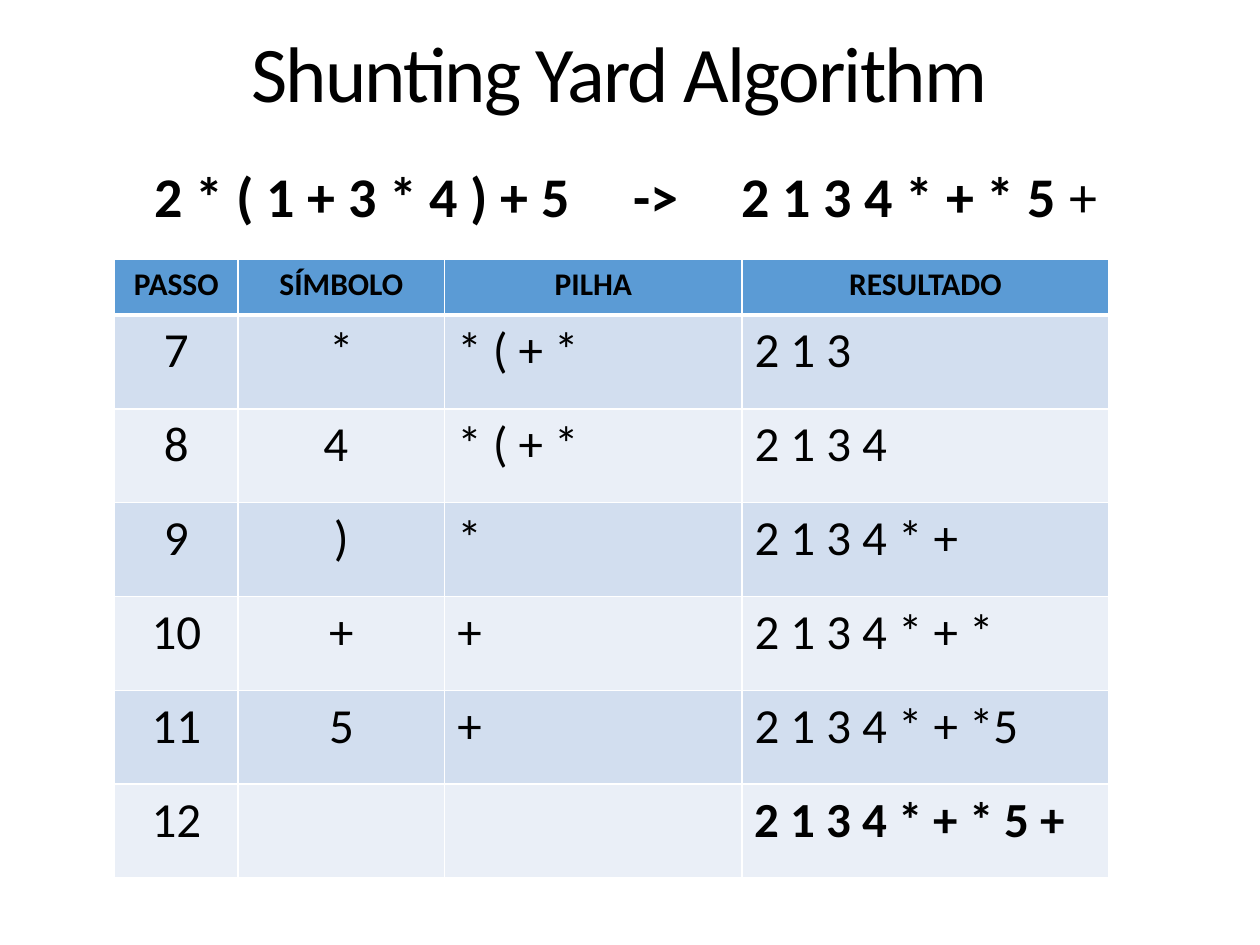
from pptx import Presentation
from pptx.dml.color import RGBColor
from pptx.enum.text import MSO_ANCHOR, MSO_AUTO_SIZE, PP_ALIGN
from pptx.oxml.xmlchemy import OxmlElement
from pptx.util import Inches, Pt

COLORS = {"text": "000000", "header": "5B9BD5", "odd": "D2DEEF",
          "even": "EAEFF7", "border": "FFFFFF"}
FONT = "Calibri"
HEADINGS = ["PASSO", "SÍMBOLO", "PILHA", "RESULTADO"]
STEPS = [
    ["7", "*", "* ( + *", "2 1 3"],
    ["8", "4 ", "* ( + *", "2 1 3 4"],
    ["9", ")", "* ", "2 1 3 4 * + "],
    ["10", "+", "+", "2 1 3 4 * + *"],
    ["11", "5", "+ ", "2 1 3 4 * + *5"],
    ["12", "", "", "2 1 3 4 * + * 5 +"],
]
COLUMN_WIDTHS = [0.98, 1.64, 2.36, 2.91]
HEADER_HEIGHT, TABLE_HEIGHT = 0.44, 4.91


class SlideBuilder:
    def __init__(self, page):
        self.page = page

    def style(self, para, size, bold=False, align=PP_ALIGN.LEFT):
        para.alignment = align
        font = para.font
        font.name, font.size, font.bold = FONT, Pt(size), bold
        font.color.rgb = RGBColor.from_string(COLORS["text"])

    def place(self, box, left, top, width, height):
        box.left, box.top = Inches(left), Inches(top)
        box.width, box.height = Inches(width), Inches(height)

    def title(self, text, *bounds):
        box = self.page.shapes.title
        self.place(box, *bounds)
        frame = box.text_frame
        frame.text = text
        frame.vertical_anchor = MSO_ANCHOR.MIDDLE
        para = frame.paragraphs[0]
        self.style(para, 45, align=PP_ALIGN.CENTER)
        para.runs[0].font._element.set("spc", "-100")

    def expression(self, bold_text, plain_text, *bounds):
        box = self.page.shapes.add_textbox(*map(Inches, bounds))
        frame = box.text_frame
        frame.word_wrap = True
        frame.auto_size = MSO_AUTO_SIZE.SHAPE_TO_FIT_TEXT
        para = frame.paragraphs[0]
        self.style(para, 32, align=PP_ALIGN.CENTER)
        for text, bold in ((bold_text, True), (plain_text, False)):
            span = para.add_run()
            span.text, span.font.bold = text, bold

    def borders(self, cell, top, bottom):
        """Draw the four cell borders; top and bottom are widths in points."""
        props = cell._tc.get_or_add_tcPr()
        sides = (("a:lnL", 1), ("a:lnR", 1), ("a:lnT", top), ("a:lnB", bottom))
        for index, (tag, width) in enumerate(sides):
            line = OxmlElement(tag)
            line.set("w", str(Pt(width)))
            fill = OxmlElement("a:solidFill")
            color = OxmlElement("a:srgbClr")
            color.set("val", COLORS["border"])
            fill.append(color)
            line.append(fill)
            props.insert(index, line)

    def table(self, rows, left, top):
        table = self.page.shapes.add_table(
            len(rows), len(COLUMN_WIDTHS), Inches(left), Inches(top),
            Inches(sum(COLUMN_WIDTHS)), Inches(TABLE_HEIGHT)).table
        for column, width in zip(table.columns, COLUMN_WIDTHS):
            column.width = Inches(width)
        step_height = (TABLE_HEIGHT - HEADER_HEIGHT) / (len(rows) - 1)
        for r, values in enumerate(rows):
            header = r == 0
            table.rows[r].height = Inches(HEADER_HEIGHT if header else step_height)
            fill = "header" if header else "odd" if r % 2 else "even"
            for c, text in enumerate(values):
                cell = table.cell(r, c)
                cell.text = text
                cell.fill.solid()
                cell.fill.fore_color.rgb = RGBColor.from_string(COLORS[fill])
                result = r == len(rows) - 1 and c == len(values) - 1
                centred = header or c < 2
                self.style(cell.text_frame.paragraphs[0], 18 if header else 28,
                           header or result,
                           PP_ALIGN.CENTER if centred else PP_ALIGN.LEFT)
                self.borders(cell, 3 if r == 1 else 1, 3 if header else 1)


def main():
    deck = Presentation()
    deck.slide_width, deck.slide_height = Inches(10), Inches(7.5)
    builder = SlideBuilder(deck.slides.add_slide(deck.slide_layouts[5]))
    builder.title("Shunting Yard Algorithm", 0.35, 0.13, 9.13, 0.87)
    builder.table([HEADINGS] + STEPS, 0.91, 2.06)
    builder.expression("2 * ( 1 + 3 * 4 ) + 5     ->     2 1 3 4 * + * 5", " +",
                       1.02, 1.23, 7.9, 0.64)
    deck.save("out.pptx")


if __name__ == "__main__":
    main()
